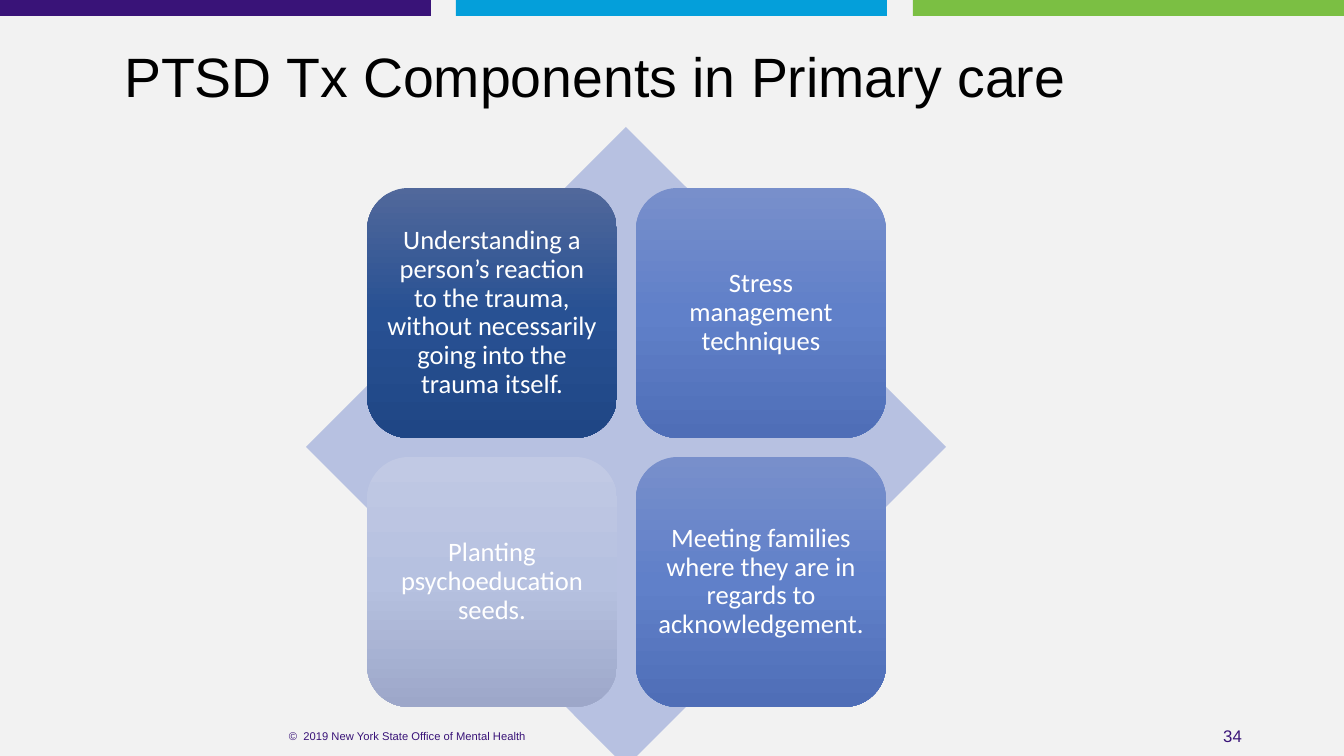
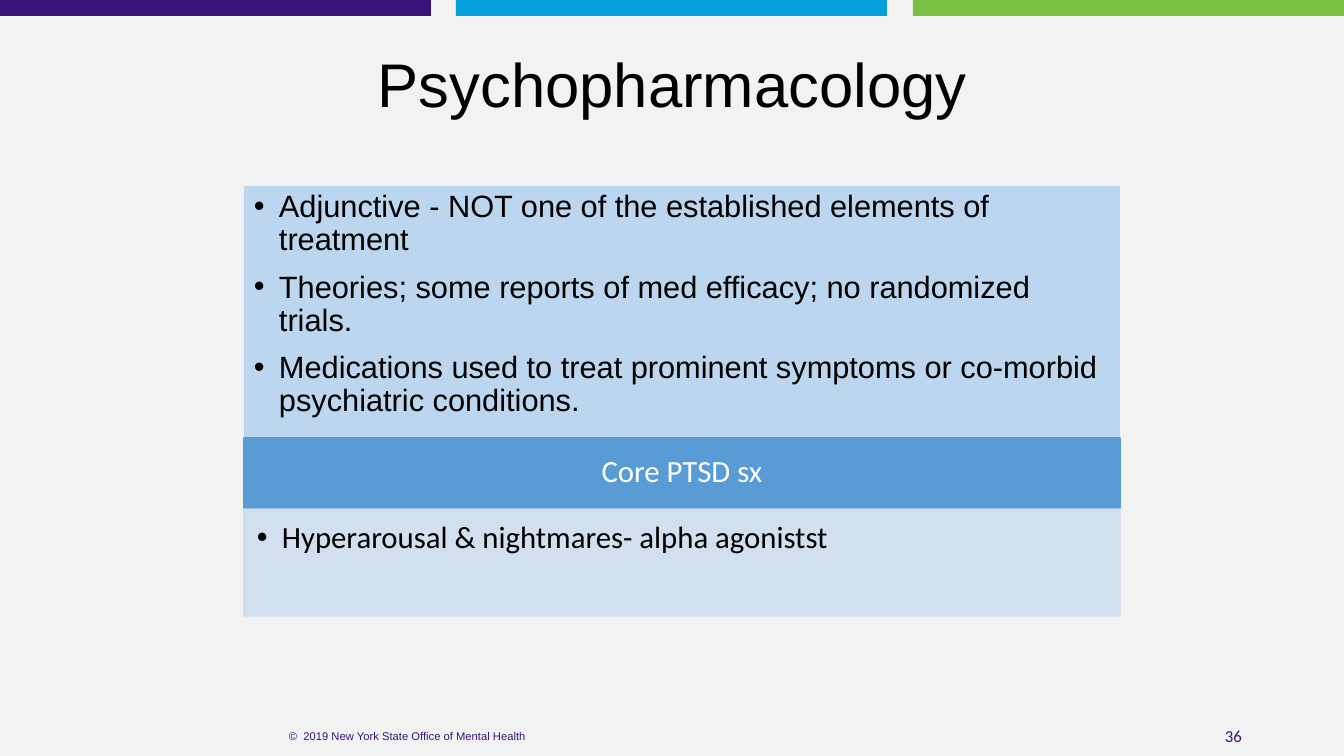
from lxml import etree
from pptx import Presentation
from pptx import util as u
from pptx.dml.color import RGBColor
from pptx.enum import shapes, text
from pptx.oxml.ns import qn

SCALE = 914400 / 100.8
WIDTH, HEIGHT = 1344, 756
PAPER = RGBColor(0xF2, 0xF2, 0xF2)
PURPLE = RGBColor(0x39, 0x13, 0x78)
CYAN = RGBColor(0x04, 0x9F, 0xDA)
GREEN = RGBColor(0x7B, 0xBF, 0x43)
BLACK = RGBColor(0, 0, 0)
WHITE = RGBColor(0xFF, 0xFF, 0xFF)
LAVENDER = RGBColor(0xB7, 0xC1, 0xE1)
SKY = RGBColor(0xBB, 0xD6, 0xEE)
BLUE = RGBColor(0x59, 0x9B, 0xD5)
PALE = RGBColor(0xCF, 0xDE, 0xEF)
NAVY_RAMP = [RGBColor(0x51, 0x68, 0x9B), RGBColor(0x28, 0x51, 0x93), RGBColor(0x1F, 0x46, 0x85)]
BLUE_RAMP = [RGBColor(0x78, 0x8F, 0xCB), RGBColor(0x60, 0x80, 0xC9), RGBColor(0x4F, 0x6E, 0xB7)]
PALE_RAMP = [RGBColor(0xC1, 0xC9, 0xE4), RGBColor(0xB6, 0xC1, 0xE0), RGBColor(0x9D, 0xA7, 0xC9)]
MIDDLE, TOP = text.MSO_ANCHOR.MIDDLE, text.MSO_ANCHOR.TOP
LEFT, CENTER, RIGHT = text.PP_ALIGN.LEFT, text.PP_ALIGN.CENTER, text.PP_ALIGN.RIGHT
FOOTER = "©  2019 New York State Office of Mental Health"


def px(n):
    """Turn px into EMU."""
    return u.Emu(round(n * SCALE))


def apply(obj, values):
    """Set each attribute named in a dict."""
    for name, value in values.items():
        setattr(obj, name, value)


def place(sp, box):
    """Move a placeholder to a box."""
    apply(sp, dict(zip(("left", "top", "width", "height"), map(px, box))))


def add_bullet(p):
    """Give a paragraph a hanging black bullet."""
    pPr = p._p.get_or_add_pPr()
    pPr.set("marL", str(px(25)))
    pPr.set("indent", str(px(-25)))
    clr = etree.SubElement(pPr, qn("a:buClr"))
    etree.SubElement(clr, qn("a:srgbClr"), val=str(BLACK))
    etree.SubElement(pPr, qn("a:buFont"), typeface="Arial")
    etree.SubElement(pPr, qn("a:buChar"), char="•")


def write(sp, lines, size, font, color, align=CENTER, anchor=MIDDLE,
          insets=(10, 5, 10, 5), spacing=0.9, bullets=False):
    """Fill a shape with formatted paragraphs."""
    tf = sp.text_frame
    sides = ("margin_left", "margin_top", "margin_right", "margin_bottom")
    apply(tf, {"word_wrap": True, "auto_size": text.MSO_AUTO_SIZE.NONE,
               "vertical_anchor": anchor, **dict(zip(sides, map(px, insets)))})
    for i, line in enumerate(lines):
        p = tf.paragraphs[0] if i == 0 else tf.add_paragraph()
        apply(p, {"alignment": align, "line_spacing": spacing,
                  "space_before": u.Pt(10 if i else 0)})
        if bullets:
            add_bullet(p)
        r = p.add_run()
        r.text = line
        apply(r.font, {"size": u.Pt(size), "name": font})
        r.font.color.rgb = color


def add_shape(s, kind, box, color=None, line=None):
    """Add a flat shape, with an outline when a line colour is given."""
    sp = s.shapes.add_shape(kind, *map(px, box))
    sp.shadow.inherit = False
    if color is not None:
        sp.fill.solid()
        sp.fill.fore_color.rgb = color
    if line is None:
        sp.line.fill.background()
    else:
        sp.line.color.rgb = line
        sp.line.width = u.Pt(1)
    return sp


def add_ramp(sp, colors):
    """Fill a shape with evenly spaced colours from top to bottom."""
    sp.fill.gradient()
    sp.fill.gradient_angle = 270
    stops = sp.element.spPr.find(".//" + qn("a:gsLst"))
    for stop in list(stops):
        stops.remove(stop)
    for i, color in enumerate(colors):
        stop = etree.SubElement(stops, qn("a:gs"), pos=str(i * 100000 // (len(colors) - 1)))
        etree.SubElement(stop, qn("a:srgbClr"), val=str(color))


def add_page(prs, layout, title, title_box, title_size, number, number_font):
    """Add a slide with its bands, footer, number and title."""
    s = prs.slides.add_slide(prs.slide_layouts[layout])
    band = 431
    for i, color in enumerate((PURPLE, CYAN, GREEN)):
        add_shape(s, shapes.MSO_SHAPE.RECTANGLE, (i * (WIDTH - band) // 2, 0, band, 16), color)
    for box, line, size, font, align in (
            ((950, 716, 302, 40), number, 12, number_font, RIGHT),
            ((182, 716, 451, 40), FOOTER, 8, "Arial", CENTER)):
        sp = s.shapes.add_textbox(*map(px, box))
        write(sp, [line], size, font, PURPLE, align, spacing=1.0)
    place(s.shapes.title, title_box)
    write(s.shapes.title, [title], title_size, "Arial", BLACK)
    return s


def add_matrix(s, box, tiles):
    """Draw four tiles over a diamond that fills the box."""
    left, top, side, _ = box
    add_shape(s, shapes.MSO_SHAPE.DIAMOND, box, LAVENDER)
    tile, gap = 250, 19
    margin = (side - 2 * tile - gap) // 2 + 1
    for i, (line, ramp) in enumerate(tiles):
        row, col = divmod(i, 2)
        sp = add_shape(s, shapes.MSO_SHAPE.ROUNDED_RECTANGLE,
                       (left + margin + col * (tile + gap),
                        top + margin + row * (tile + gap), tile, tile))
        add_ramp(sp, ramp)
        write(sp, [line], 19, "Calibri", WHITE, insets=(8, 8, 8, 8))


def add_panel(s, box, points, heading, details):
    """Stack the points, a heading bar and its details in a box."""
    left, top, width, height = box
    points_h, bar_h = 252, 71
    body = s.placeholders[1]
    place(body, (left, top, width, points_h - 1))
    body.fill.solid()
    body.fill.fore_color.rgb = SKY
    write(body, points, 22, "Arial", BLACK, LEFT, TOP, bullets=True)
    bar = add_shape(s, shapes.MSO_SHAPE.RECTANGLE,
                    (left, top + points_h, width, bar_h - 1), BLUE, BLUE)
    write(bar, [heading], 22, "Calibri", WHITE, insets=(17, 10, 17, 10))
    used = points_h + bar_h
    sp = add_shape(s, shapes.MSO_SHAPE.RECTANGLE,
                   (left, top + used, width, height - used), PALE, PALE)
    for clr in sp.element.spPr.iter(qn("a:srgbClr")):
        etree.SubElement(clr, qn("a:alpha"), val="90000")
    write(sp, details, 22, "Calibri", BLACK, LEFT, TOP, (13, 13, 17, 19), bullets=True)


def main():
    """Build and save the presentation."""
    prs = Presentation()
    apply(prs, {"slide_width": px(WIDTH), "slide_height": px(HEIGHT)})
    fill = prs.slide_master.background.fill
    fill.solid()
    fill.fore_color.rgb = PAPER

    s = add_page(prs, 5, "PTSD Tx Components in Primary care",
                 (112, 14, 966, 131), 39.6, "34", "Arial")
    add_matrix(s, (306, 127, 640, 640), [
        ("Understanding a person’s reaction to the trauma, without necessarily "
         "going into the trauma itself.", NAVY_RAMP),
        ("Stress management techniques", BLUE_RAMP),
        ("Planting psychoeducation seeds.", PALE_RAMP),
        ("Meeting families where they are in regards to acknowledgement.", BLUE_RAMP)])

    s = add_page(prs, 1, "Psychopharmacology", (244, 25, 857, 126), 44, "36", "Calibri")
    add_panel(s, (244, 186, 876, 430), [
        "Adjunctive - NOT one of the established elements of treatment",
        "Theories; some reports of med efficacy; no randomized trials.",
        "Medications used to treat prominent symptoms or co-morbid psychiatric conditions."],
        "Core PTSD sx", ["Hyperarousal & nightmares- alpha agonistst"])
    prs.save("out.pptx")


if __name__ == "__main__":
    main()
